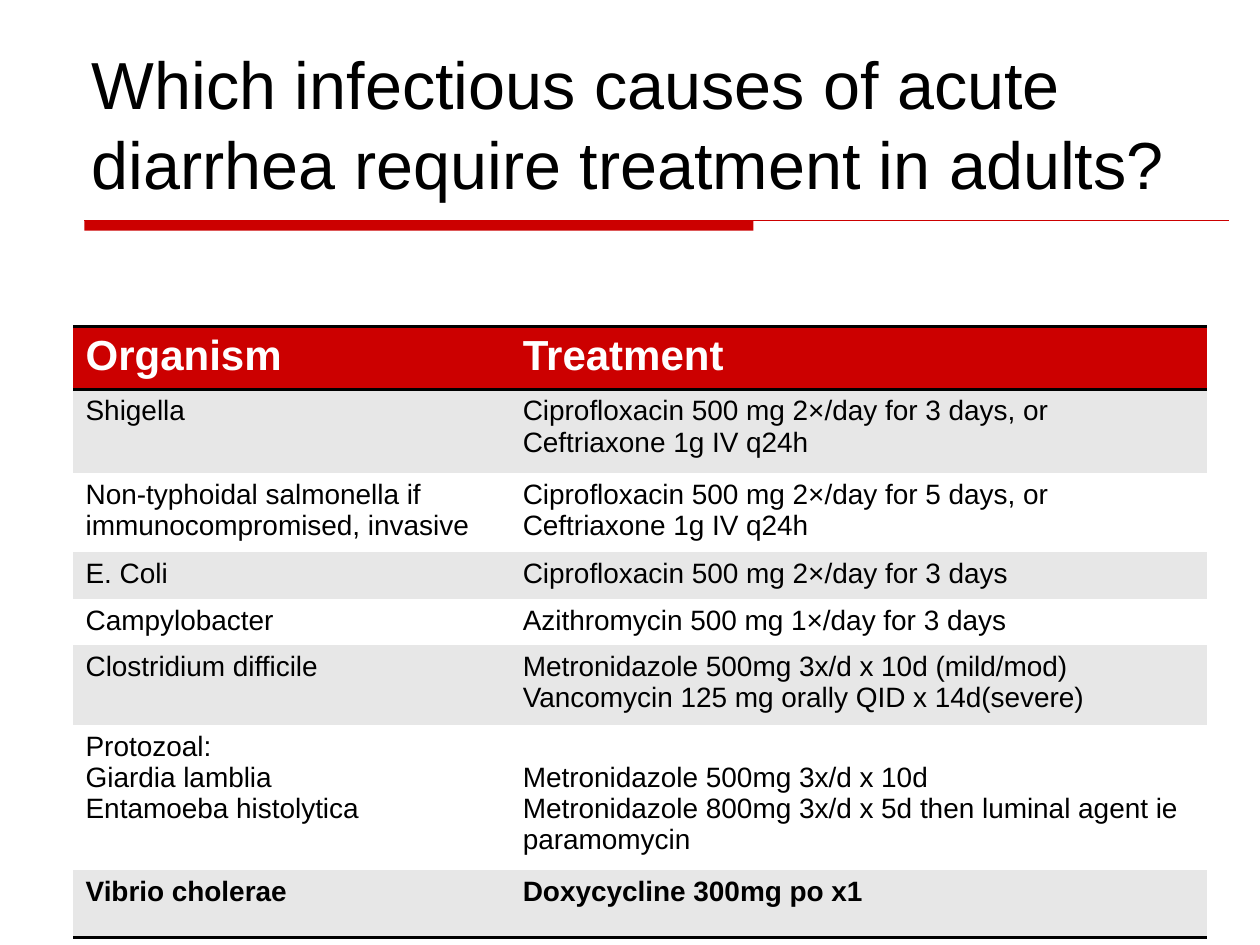
from lxml.etree import SubElement
from pptx import Presentation
from pptx.dml.color import RGBColor
from pptx.enum.shapes import MSO_CONNECTOR, MSO_SHAPE
from pptx.enum.text import MSO_ANCHOR
from pptx.oxml import parse_xml
from pptx.oxml.ns import nsdecls, qn
from pptx.util import Inches, Pt

RED = RGBColor(0xCC, 0x00, 0x00)
BLACK = RGBColor(0x00, 0x00, 0x00)
WHITE = RGBColor(0xFF, 0xFF, 0xFF)
GRAY = RGBColor(0xE7, 0xE7, 0xE7)
NO_STYLE = "{2D5ABB26-0587-4C30-8999-92F81FD0307C}"

ROWS = [
    (0.36, "Organism", "Treatment"),
    (0.66, "Shigella", "Ciprofloxacin 500 mg 2×/day for 3 days, or Ceftriaxone 1g IV q24h"),
    (0.58, "Non-typhoidal salmonella if immunocompromised, invasive",
     "Ciprofloxacin 500 mg 2×/day for 5 days, or Ceftriaxone 1g IV q24h"),
    (0.36, "E. Coli", "Ciprofloxacin 500 mg 2×/day for 3 days"),
    (0.36, "Campylobacter", "Azithromycin 500 mg 1×/day for 3 days"),
    (0.63, "Clostridium difficile",
     "Metronidazole 500mg 3x/d x 10d (mild/mod)\nVancomycin 125 mg orally QID x 14d(severe)"),
    (1.06, "Protozoal:\nGiardia lamblia\nEntamoeba histolytica",
     "Metronidazole 500mg 3x/d x 10d\n"
     "Metronidazole 800mg 3x/d x 5d then luminal agent ie paramomycin"),
    (0.54, "Vibrio cholerae", "Doxycycline 300mg po x1"),
]


def set_font(p, size, color, bold=False):
    p.font.name = "Arial"
    p.font.size = Pt(size)
    p.font.color.rgb = color
    p.font.bold = bold


def add_border(cell, side):
    ln = parse_xml(
        f'<a:{side} {nsdecls("a")} w="{Pt(2)}"><a:solidFill>'
        f'<a:srgbClr val="{BLACK}"/></a:solidFill></a:{side}>')
    cell._tc.get_or_add_tcPr().insert(0, ln)


prs = Presentation()
prs.slide_width = Inches(10)
prs.slide_height = Inches(7.5)
s = prs.slides.add_slide(prs.slide_layouts[6])

bar = s.shapes.add_shape(
    MSO_SHAPE.RECTANGLE, Inches(0.67), Inches(1.75), Inches(5.31), Inches(0.08))
bar.shadow.inherit = False
bar.fill.solid()
bar.fill.fore_color.rgb = RED
bar.line.fill.background()

rule = s.shapes.add_connector(
    MSO_CONNECTOR.STRAIGHT, Inches(0.67), Inches(1.75), Inches(9.75), Inches(1.75))
rule.line.color.rgb = RED
rule.line.width = Pt(0.75)
SubElement(rule._element.spPr, qn("a:effectLst"))

title = s.shapes.add_textbox(Inches(0.63), Inches(0.33), Inches(8.75), Inches(1.33))
tf = title.text_frame
tf.word_wrap = True
tf.vertical_anchor = MSO_ANCHOR.BOTTOM
p = tf.paragraphs[0]
p.text = "Which infectious causes of acute diarrhea require treatment in adults?"
set_font(p, 38, BLACK)

height = sum(row[0] for row in ROWS)
table = s.shapes.add_table(
    len(ROWS), 2, Inches(0.58), Inches(2.59), Inches(9), Inches(height)).table
table.first_row = False
table.horz_banding = False
table._tbl.tblPr.find(qn("a:tableStyleId")).text = NO_STYLE
table.columns[0].width = Inches(3.47)
table.columns[1].width = Inches(5.53)

last = len(ROWS) - 1
for i, (row_height, *texts) in enumerate(ROWS):
    table.rows[i].height = Inches(row_height)
    header = i == 0
    for j, text in enumerate(texts):
        cell = table.cell(i, j)
        cell.text = text
        cell.fill.solid()
        cell.fill.fore_color.rgb = RED if header else GRAY if i % 2 else WHITE
        for p in cell.text_frame.paragraphs:
            set_font(p, 24 if header else 16, WHITE if header else BLACK, i in (0, last))
        if i in (0, last):
            add_border(cell, "lnB")
        if header:
            add_border(cell, "lnT")

table.cell(6, 1).margin_top = Inches(0.3)

prs.save("out.pptx")
